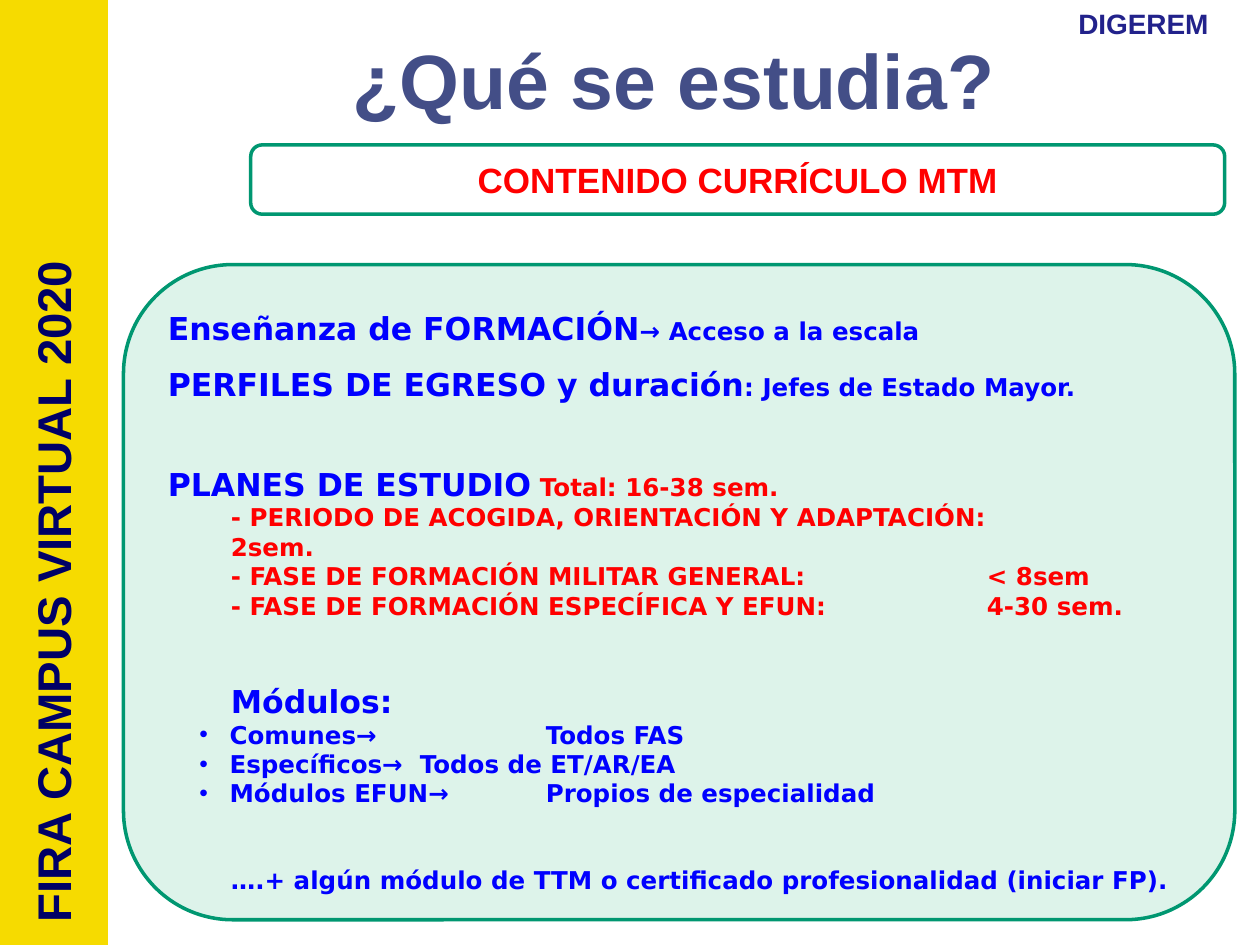
import dataclasses
import typing

import lxml.etree
import pptx
import pptx.dml.color
import pptx.enum.shapes
import pptx.enum.text
import pptx.oxml.ns
import pptx.util

Inches = pptx.util.Inches
Pt = pptx.util.Pt
Shapes = pptx.enum.shapes.MSO_SHAPE
Align = pptx.enum.text.PP_ALIGN
Anchor = pptx.enum.text.MSO_ANCHOR


@dataclasses.dataclass(frozen=True)
class Theme:
    yellow: str = "F6DB00"
    green: str = "009771"
    mint: str = "DDF3EA"
    white: str = "FFFFFF"
    red: str = "FF0000"
    blue: str = "0000FF"
    slate: str = "434E87"
    indigo: str = "22228B"
    navy: str = "000066"
    label_font: str = "Arial"
    body_font: str = "DejaVu Sans"
    title: int = 44
    banner: int = 27
    heading: int = 20
    agency: int = 16
    lead: int = 18
    body: int = 14


THEME = Theme()


class Piece(typing.NamedTuple):
    text: str
    size: int
    color: str
    font: str = THEME.body_font


class Line(typing.NamedTuple):
    pieces: list[Piece]
    align: Align = Align.LEFT
    spacing: float = 1.0
    before: float = 0
    indent: float = 0
    hanging: float = 0


class Area(typing.NamedTuple):
    left: float
    top: float
    width: float
    height: float


def add_line(para, line: Line) -> None:
    properties = para._p.get_or_add_pPr()
    for name, value in {"marL": line.indent, "indent": -line.hanging, "defTabSz": 1}.items():
        properties.set(name, str(Inches(value)))
    formats = {"alignment": line.align, "line_spacing": line.spacing}
    if line.before:
        formats["space_before"] = Pt(line.before)
    for name, value in formats.items():
        setattr(para, name, value)
    if line.hanging:
        namespace = pptx.oxml.ns.qn
        lxml.etree.SubElement(properties, namespace("a:buFont")).set("typeface", "Arial")
        lxml.etree.SubElement(properties, namespace("a:buChar")).set("char", "•")
    for piece in line.pieces:
        span = para.add_run()
        span.text = piece.text
        for name, value in {"name": piece.font, "size": Pt(piece.size), "bold": True}.items():
            setattr(span.font, name, value)
        span.font.color.rgb = pptx.dml.color.RGBColor.from_string(piece.color)


def write(box, lines: list[Line], anchor: Anchor) -> None:
    frame = box.text_frame
    for name, value in {"word_wrap": True, "vertical_anchor": anchor}.items():
        setattr(frame, name, value)
    for index, line in enumerate(lines):
        add_line(frame.add_paragraph() if index else frame.paragraphs[0], line)


def add_panel(page, kind: Shapes, area: Area, fill: str, border: str, weight: float):
    box = page.shapes.add_shape(kind, *map(Inches, area))
    box.shadow.inherit = False
    box.fill.solid()
    box.fill.fore_color.rgb = pptx.dml.color.RGBColor.from_string(fill)
    box.line.color.rgb = pptx.dml.color.RGBColor.from_string(border)
    box.line.width = Pt(weight)
    return box


def add_label(page, area: Area, text: str, size: int, color: str, rotation: int = 0) -> None:
    box = page.shapes.add_textbox(*map(Inches, area))
    box.rotation = rotation
    write(box, [centred(text, size, color)], Anchor.TOP)


def centred(text: str, size: int, color: str) -> Line:
    return Line([Piece(text, size, color, THEME.label_font)], Align.CENTER)


def lead(text: str, detail: str = "", color: str = THEME.blue,
         before: float = 0, indent: float = 0) -> Line:
    pieces = [Piece(text, THEME.lead, THEME.blue)]
    if detail:
        pieces.append(Piece(detail, THEME.body, color))
    return Line(pieces, spacing=1.5, before=before, indent=indent)


def phase(text: str) -> Line:
    return Line([Piece(text, THEME.body, THEME.red)], indent=0.5)


def module(text: str) -> Line:
    return Line([Piece(text, THEME.body, THEME.blue)], indent=0.49, hanging=0.24)


def main() -> None:
    deck = pptx.Presentation()
    deck.slide_width, deck.slide_height = Inches(10), Inches(7.5)
    page = deck.slides.add_slide(deck.slide_layouts[6])
    gap = 24.4

    add_panel(page, Shapes.RECTANGLE, Area(0, 0, 0.85, 7.5), THEME.yellow, THEME.yellow, 0.75)
    heading = add_panel(page, Shapes.ROUNDED_RECTANGLE, Area(1.99, 1.15, 7.73, 0.55),
                        THEME.white, THEME.green, 2)
    write(heading, [centred("CONTENIDO CURRÍCULO MTM", THEME.heading, THEME.red)], Anchor.MIDDLE)

    curriculum = add_panel(page, Shapes.ROUNDED_RECTANGLE, Area(0.98, 2.1, 8.82, 5.2),
                           THEME.mint, THEME.green, 2)
    closing = "….+ algún módulo de TTM o certificado profesionalidad (iniciar FP)."
    write(curriculum, [
        lead("Enseñanza de FORMACIÓN", "→ Acceso a la escala"),
        lead("PERFILES DE EGRESO y duración", ": Jefes de Estado Mayor."),
        lead("PLANES DE ESTUDIO", " Total: 16-38 sem.", THEME.red, before=gap),
        phase("- PERIODO DE ACOGIDA, ORIENTACIÓN Y ADAPTACIÓN: \t2sem."),
        phase("- FASE DE FORMACIÓN MILITAR GENERAL: \t\t< 8sem"),
        phase("- FASE DE FORMACIÓN ESPECÍFICA Y EFUN: \t\t4-30 sem."),
        lead("Módulos:", before=gap, indent=0.5),
        module("Comunes→ \t\tTodos FAS"),
        module("Específicos→ \tTodos de ET/AR/EA"),
        module("Módulos EFUN→ \tPropios de especialidad"),
        Line([Piece(closing, THEME.body, THEME.blue)], spacing=1.5, before=gap, indent=0.5),
    ], Anchor.MIDDLE)

    add_label(page, Area(2.24, 0.21, 6.22, 0.83), "¿Qué se estudia?", THEME.title, THEME.slate)
    add_label(page, Area(8.15, 0, 1.85, 0.37), "DIGEREM", THEME.agency, THEME.indigo)
    add_label(page, Area(-2.41, 4.41, 5.67, 0.57), "FIRA CAMPUS VIRTUAL 2020",
              THEME.banner, THEME.navy, 270)
    deck.save("out.pptx")


if __name__ == "__main__":
    main()
